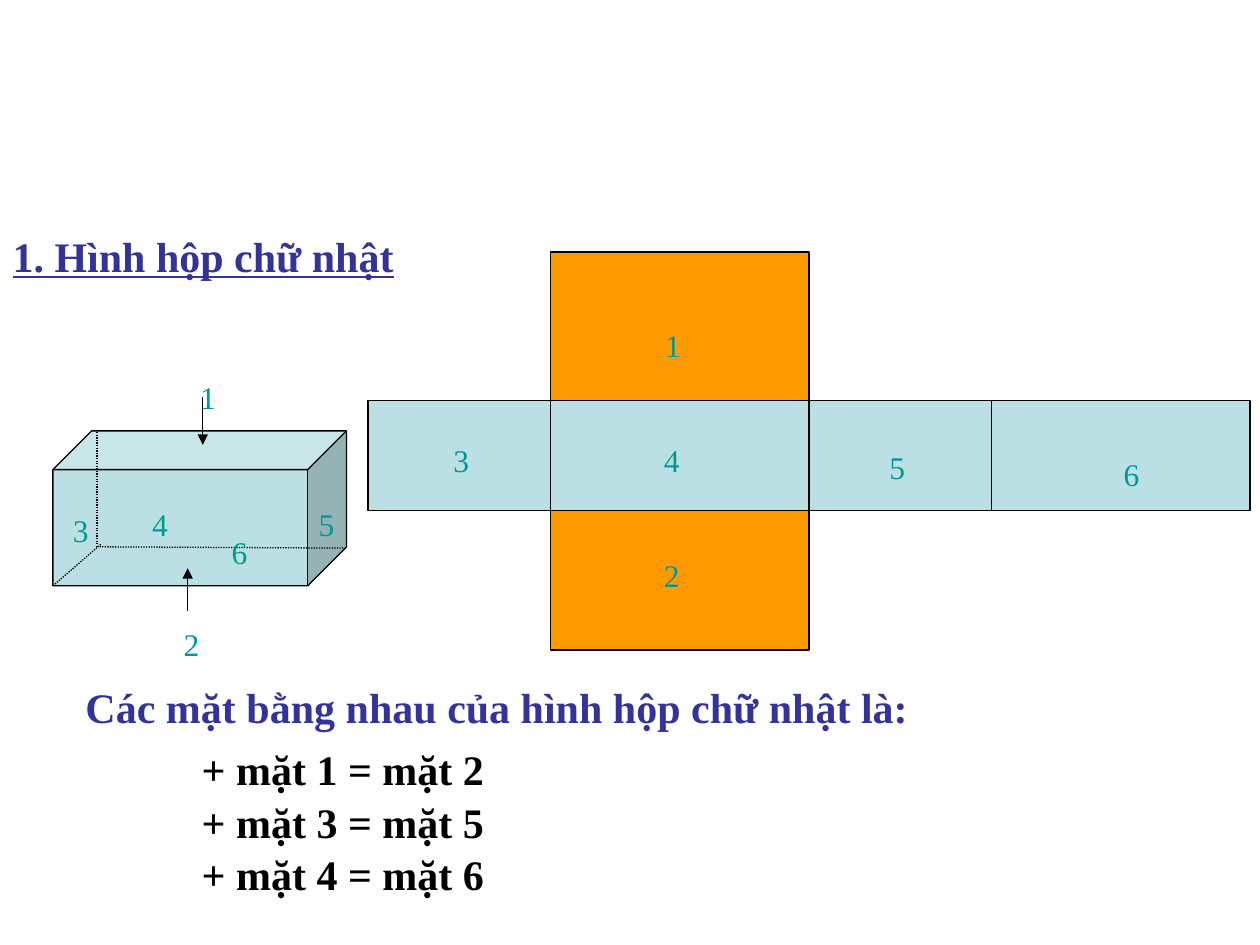
from pptx import Presentation
from pptx.dml.color import RGBColor as Rgb
from pptx.enum.dml import MSO_LINE as Dash
from pptx.enum.shapes import MSO_CONNECTOR as Link, MSO_SHAPE as Form
from pptx.enum.text import MSO_ANCHOR as Anchor, MSO_AUTO_SIZE as Fit, PP_ALIGN as Align
from pptx.oxml.ns import qn
from pptx.util import Emu, Pt
from lxml.etree import SubElement as Sub

PX = 9144
FONT = "Times New Roman"
HUES = {"ink": "000000", "head": "333399", "mark": "009999",
        "side": "BBE0E3", "cap": "FF9900"}


def px(*nums):
    """Turn px lengths into EMU."""
    return [Emu(n * PX) for n in nums]


def hue(name):
    """Look up a colour by name."""
    return Rgb.from_string(HUES[name])


def place(shape, box):
    """Move a shape to a box."""
    shape.left, shape.top, shape.width, shape.height = px(*box)


def write(shape, lines, size, tone, bold=False, line=False, top=8):
    """Fill a text shape with lines of one style."""
    frame = shape.text_frame
    frame.text = "\n".join(lines)
    frame.word_wrap = True
    frame.auto_size = Fit.NONE
    frame.vertical_anchor = Anchor.TOP
    frame.margin_top, frame.margin_bottom = px(top, 2)
    for para in frame.paragraphs:
        para.alignment = Align.LEFT
        para.space_before = Pt(0)
        font = para.font
        font.name, font.size, font.bold = FONT, Pt(size), bold
        font.underline = line
        font.color.rgb = hue(tone)


def label(slide, text, x, y):
    """Add the number of one face."""
    write(slide.shapes.add_textbox(*px(x, y, 40, 40)), [text], 18, "mark")


def solid(slide, form, box, tone):
    """Add a filled shape with a thin outline."""
    shape = slide.shapes.add_shape(form, *px(*box))
    shape.shadow.inherit = False
    shape.fill.solid()
    shape.fill.fore_color.rgb = hue(tone)
    shape.line.color.rgb = hue("ink")
    shape.line.width = Pt(0.75)
    return shape


def stroke(slide, ends, arrow=False):
    """Add a dotted hidden edge or a solid arrow."""
    link = slide.shapes.add_connector(Link.STRAIGHT, *px(*ends))
    link.line.color.rgb = hue("ink")
    link.line.width = Pt(0.75)
    if arrow:
        Sub(link.line._get_or_add_ln(), qn("a:tailEnd"), type="triangle")
    else:
        link.line.dash_style = Dash.ROUND_DOT
    Sub(link._element.spPr, qn("a:effectLst"))


def net(slide, x, y):
    """Draw the unfolded box with numbered faces."""
    long, short, tall = 205, 145, 87
    cols = [0, short, short + long, 2 * short + long]
    mid, low = 118, 118 + tall
    faces = [
        ("1", cols[1], 0, long, mid, "cap", 81, 51),
        ("2", cols[1], low, long, 111, "cap", 80, 28),
        ("3", cols[0], mid, short, tall, "side", 58, 24),
        ("4", cols[1], mid, long, tall, "side", 80, 24),
        ("5", cols[2], mid, short, tall, "side", 54, 30),
        ("6", cols[3], mid, long, tall, "side", 95, 35),
    ]
    for text, left, top, wide, high, tone, dx, dy in faces:
        solid(slide, Form.RECTANGLE, (x + left, y + top, wide, high), tone)
        label(slide, text, x + left + dx, y + top + dy)


def block(slide, x, y, wide, high):
    """Draw the closed box with hidden edges and arrows."""
    solid(slide, Form.CUBE, (x, y, wide, high), "side").adjustments[0] = 0.25
    deep = 35
    base = high - 31
    edges = [(deep, 1, deep, base), (deep + 2, base, wide - 1, base + 1),
             (deep + 3, base - 2, 0, high)]
    darts = [(107, 143, 107, 109), (119, -27, 119, 11)]
    for group, arrow in ((edges, False), (darts, True)):
        for x1, y1, x2, y2 in group:
            stroke(slide, (x + x1, y + y1, x + x2, y + y2), arrow)
    marks = {"1": (107, -50), "2": (94, 146), "3": (6, 56),
             "4": (69, 51), "5": (201, 51), "6": (132, 73)}
    for text, (dx, dy) in marks.items():
        label(slide, text, x + dx, y + dy)


def pairs(slide, x, y):
    """Write the list of equal faces under its lead line."""
    lead = slide.shapes.add_textbox(*px(x, y, 842, 51))
    write(lead, ["Các mặt bằng nhau của hình hộp chữ nhật là:"], 24, "head", True)
    body = slide.placeholders[1]
    place(body, (x + 92, y + 50, 333, 135))
    lines = [f"+ mặt {a} = mặt {b}" for a, b in ((1, 2), (3, 5), (4, 6))]
    write(body, lines, 24, "ink", True, top=5)
    for para in body.text_frame.paragraphs:
        para.line_spacing = Pt(30.2)
        props = para._p.get_or_add_pPr()
        props.set("marL", "0")
        props.set("indent", "0")
        bare = props.makeelement(qn("a:buNone"), {})
        props.find(qn("a:defRPr")).addprevious(bare)


def main():
    """Build and save the slide."""
    deck = Presentation()
    deck.slide_width, deck.slide_height = px(1000, 750)
    slide = deck.slides.add_slide(deck.slide_layouts[1])
    place(slide.shapes.title, (0, 175, 475, 51))
    write(slide.shapes.title, ["1. Hình hộp chữ nhật"], 24, "head", True, True)
    net(slide, 292, 200)
    block(slide, 42, 342, 233, 123)
    pairs(slide, 58, 533)
    deck.save("out.pptx")


if __name__ == "__main__":
    main()
